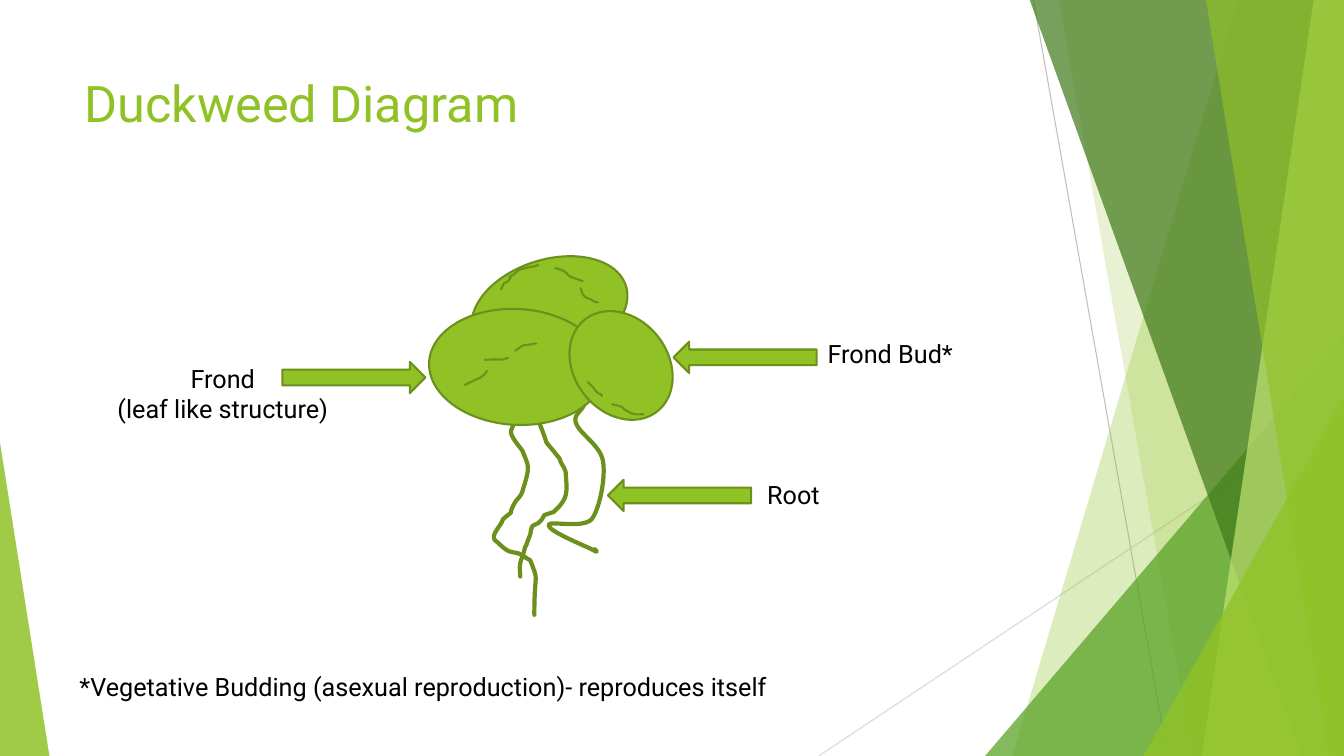
"""Build the duckweed diagram slide."""

from dataclasses import dataclass
from typing import Optional

from lxml.etree import SubElement
from pptx import Presentation
from pptx.dml.color import RGBColor
from pptx.enum.shapes import MSO_CONNECTOR, MSO_SHAPE
from pptx.enum.text import MSO_ANCHOR, MSO_AUTO_SIZE, PP_ALIGN
from pptx.oxml.ns import qn
from pptx.util import Inches, Pt

CELL = Inches(0.01)
COLUMNS, ROWS = 1333, 750
FONT = "Roboto"

LEAF = RGBColor(0x90, 0xC2, 0x26)
STEM = RGBColor(0x6B, 0x90, 0x1C)
GRASS = RGBColor(0x54, 0xA0, 0x21)
FOREST = RGBColor(0x3F, 0x78, 0x19)
LIME = RGBColor(0xC0, 0xE4, 0x74)
SILVER = RGBColor(0xBF, 0xBF, 0xBF)
MIST = RGBColor(0xD9, 0xD9, 0xD9)
BLACK = RGBColor(0, 0, 0)

Point = tuple[int, int]


@dataclass(frozen=True)
class Box:
    """A rectangle in grid columns and rows."""
    left: int
    top: int
    width: int
    height: int

    def scaled(self) -> tuple[int, int, int, int]:
        """Return the rectangle in slide units."""
        return self.left * CELL, self.top * CELL, self.width * CELL, self.height * CELL


@dataclass(frozen=True)
class Ray:
    """A thin background line."""
    start: Point
    end: Point
    colour: RGBColor


@dataclass(frozen=True)
class Facet:
    """A translucent band running from the top to the bottom of the slide."""
    top_left: int
    bottom_left: int
    colour: RGBColor
    opacity: int


@dataclass(frozen=True)
class Wedge:
    """A translucent right triangle standing on the bottom edge."""
    box: Box
    apex: float
    colour: RGBColor
    opacity: int


@dataclass(frozen=True)
class Solid:
    """An outlined green preset shape."""
    box: Box
    rotation: float
    kind: MSO_SHAPE


@dataclass(frozen=True)
class Label:
    """A caption beside the plant."""
    text: str
    box: Box
    align: Optional[PP_ALIGN] = None


RAYS = [Ray((1025, 0), (1158, 750), SILVER), Ray((1333, 403), (812, 750), MIST)]
BACKDROP = [
    Facet(1228, 1004, LEAF, 30),
    Facet(1050, 1183, LEAF, 20),
    Wedge(Box(977, 333, 356, 417), 1, GRASS, 72),
    Facet(1021, 1291, FOREST, 70),
    Facet(1303, 1192, LIME, 70),
    Facet(1196, 1318, LEAF, 65),
    Wedge(Box(1134, 393, 199, 357), 1, LEAF, 80),
    Wedge(Box(0, 439, 49, 311), 0, LEAF, 85),
]
ROOTS = [
    [(524, 411), (527, 413), (532, 414), (534, 417), (534, 417), (539, 430), (540, 433),
     (541, 435), (541, 437), (542, 439), (545, 443), (548, 446), (551, 450),
     (552, 452), (554, 453), (555, 455), (556, 457), (556, 459), (557, 460),
     (558, 463), (561, 465), (561, 468), (562, 484), (564, 492), (555, 502),
     (553, 504), (551, 506), (549, 508), (546, 509), (543, 510), (540, 511),
     (538, 514), (537, 517), (534, 519), (532, 520), (529, 521), (528, 522),
     (526, 524), (527, 527), (526, 530), (525, 533), (523, 537), (522, 541),
     (521, 542), (520, 544), (520, 546), (519, 548), (519, 551), (518, 553),
     (517, 555), (516, 557), (516, 559), (515, 563), (516, 567), (516, 572)],
    [(544, 358), (559, 372), (574, 385), (579, 396), (583, 406), (568, 409), (571, 419),
     (574, 430), (595, 441), (598, 457), (601, 473), (595, 504), (587, 515),
     (578, 525), (544, 516), (544, 521), (544, 527), (579, 541), (587, 545),
     (594, 549), (592, 547), (590, 545)],
    [(518, 410), (514, 415), (509, 420), (507, 427), (505, 432), (516, 444), (518, 447),
     (525, 464), (526, 462), (518, 488), (517, 492), (513, 495), (511, 498),
     (501, 516), (514, 502), (499, 515), (497, 522), (486, 531), (491, 536),
     (495, 539), (498, 543), (503, 546), (506, 548), (511, 548), (514, 549),
     (519, 551), (522, 554), (526, 556), (535, 580), (530, 563), (530, 610)],
]
FRONDS = [
    Solid(Box(495, 228, 100, 159), 252.5, MSO_SHAPE.OVAL),
    Solid(Box(455, 277, 115, 174), 93.2, MSO_SHAPE.OVAL),
    Solid(Box(558, 316, 116, 93), 232, MSO_SHAPE.OVAL),
]
VEINS = [
    [(511, 348), (513, 347), (515, 345), (518, 343), (520, 342), (522, 343), (525, 342),
     (531, 341), (526, 341), (532, 341)],
    [(481, 357), (502, 356), (495, 358), (504, 355)],
    [(461, 382), (463, 381), (465, 380), (467, 379), (478, 374), (465, 379), (476, 375),
     (477, 374), (479, 373), (480, 372), (481, 371), (483, 368), (483, 368)],
    [(583, 379), (585, 381), (587, 383), (589, 385), (590, 386), (590, 388), (592, 389),
     (593, 390), (594, 391), (596, 391), (596, 392), (597, 392), (597, 393)],
    [(607, 401), (610, 402), (613, 402), (615, 403), (617, 403), (618, 405), (619, 406),
     (621, 407), (622, 408), (624, 409), (631, 412), (631, 411), (638, 411)],
    [(497, 287), (498, 285), (499, 283), (500, 281), (501, 280), (503, 280), (504, 279),
     (512, 270), (498, 279), (510, 272), (511, 271), (511, 270), (513, 269),
     (515, 267), (518, 267), (521, 266), (522, 266), (524, 265), (525, 265),
     (527, 265), (529, 264), (531, 264), (532, 264), (533, 263), (534, 263)],
    [(551, 266), (554, 267), (559, 268), (562, 271), (563, 272), (564, 274), (565, 274),
     (568, 276), (573, 277), (573, 277), (575, 278), (576, 278), (578, 279)],
    [(576, 286), (577, 288), (577, 290), (578, 292), (580, 295), (582, 296), (586, 297),
     (587, 297), (588, 299), (589, 299), (590, 300), (593, 300), (593, 300)],
]
ARROWS = [
    Solid(Box(left, top, 142, 31), rotation, MSO_SHAPE.RIGHT_ARROW)
    for left, top, rotation in [(280, 359, 0), (668, 339, 180), (603, 476, 180)]
]
LABELS = [
    Label("Root", Box(751, 471, 72, 40)),
    Label("Frond Bud*", Box(811, 331, 154, 40)),
    Label("Frond\n(leaf like structure)", Box(98, 355, 246, 71), PP_ALIGN.CENTER),
    Label("*Vegetative Budding (asexual reproduction)- reproduces itself",
          Box(69, 661, 754, 40)),
]


def add_outline(shapes, points: list[Point], close: bool):
    """Add a freeform through grid points."""
    builder = shapes.build_freeform(*points[0], scale=CELL)
    builder.add_line_segments(points[1:], close=close)
    shape = builder.convert_to_shape()
    shape.shadow.inherit = False
    return shape


def add_ray(shapes, ray: Ray) -> None:
    """Draw a thin line without a shadow."""
    ends = [length * CELL for length in (*ray.start, *ray.end)]
    connector = shapes.add_connector(MSO_CONNECTOR.STRAIGHT, *ends)
    connector.line.color.rgb = ray.colour
    connector.line.width = Pt(0.75)
    SubElement(connector.element.spPr, qn("a:effectLst"))


def add_backdrop(shapes, part: Facet | Wedge) -> None:
    """Draw one translucent background part."""
    if isinstance(part, Facet):
        corners = [(part.top_left, -1), (COLUMNS, -1), (COLUMNS, ROWS), (part.bottom_left, ROWS)]
        shape = add_outline(shapes, corners, True)
    else:
        shape = shapes.add_shape(MSO_SHAPE.ISOSCELES_TRIANGLE, *part.box.scaled())
        shape.adjustments[0] = part.apex
        shape.shadow.inherit = False
    shape.fill.solid()
    shape.fill.fore_color.rgb = part.colour
    shape.line.fill.background()
    colour = shape.element.spPr.find(qn("a:solidFill"))[0]
    SubElement(colour, qn("a:alpha"), val=str(part.opacity * 1000))


def add_strand(shapes, points: list[Point], width: float) -> None:
    """Draw a root or a vein as a chain of cubic curves."""
    shape = add_outline(shapes, points, False)
    shape.fill.background()
    shape.line.color.rgb = STEM
    shape.line.width = Pt(width)
    shape.element.spPr.find(qn("a:ln")).set("cap", "rnd")
    outline = next(shape.element.iter(qn("a:path")))
    segments = outline.findall(qn("a:lnTo"))
    for first in range(0, len(segments), 3):
        curve = SubElement(outline, qn("a:cubicBezTo"))
        for segment in segments[first:first + 3]:
            curve.append(segment[0])
            outline.remove(segment)


def add_solid(shapes, solid: Solid) -> None:
    """Draw a frond or an arrow."""
    shape = shapes.add_shape(solid.kind, *solid.box.scaled())
    shape.rotation = solid.rotation
    shape.shadow.inherit = False
    shape.fill.solid()
    shape.fill.fore_color.rgb = LEAF
    shape.line.color.rgb = STEM
    shape.line.width = Pt(1.5)


def write(frame, text: str, size: int, colour: RGBColor, align: Optional[PP_ALIGN]) -> None:
    """Fill a text frame and format its runs."""
    frame.text = text
    frame.word_wrap = True
    frame.vertical_anchor = MSO_ANCHOR.TOP
    for para in frame.paragraphs:
        para.alignment = align
        for span in para.runs:
            span.font.name = FONT
            span.font.size = Pt(size)
            span.font.color.rgb = colour


def main() -> None:
    """Assemble and save the deck."""
    deck = Presentation()
    deck.slide_width, deck.slide_height = COLUMNS * CELL, ROWS * CELL
    page = deck.slides.add_slide(deck.slide_layouts[5])
    backdrop = page.shapes.add_group_shape()
    for ray in RAYS:
        add_ray(backdrop.shapes, ray)
    for part in BACKDROP:
        add_backdrop(backdrop.shapes, part)
    deck.slide_master.element.cSld.spTree.insert(2, backdrop.element)
    title = page.shapes.title
    title.left, title.top, title.width, title.height = Box(74, 67, 940, 144).scaled()
    write(title.text_frame, "Duckweed Diagram", 36, LEAF, PP_ALIGN.LEFT)
    title.text_frame.auto_size = MSO_AUTO_SIZE.NONE
    plant = page.shapes.add_group_shape().shapes
    for root in ROOTS:
        add_strand(plant, root, 3)
    for frond in FRONDS:
        add_solid(plant, frond)
    for vein in VEINS:
        add_strand(plant, vein, 1.5)
    for arrow in ARROWS:
        add_solid(page.shapes, arrow)
    for label in LABELS:
        frame = page.shapes.add_textbox(*label.box.scaled()).text_frame
        write(frame, label.text, 18, BLACK, label.align)
        frame.auto_size = MSO_AUTO_SIZE.SHAPE_TO_FIT_TEXT
    deck.save("out.pptx")


if __name__ == "__main__":
    main()
